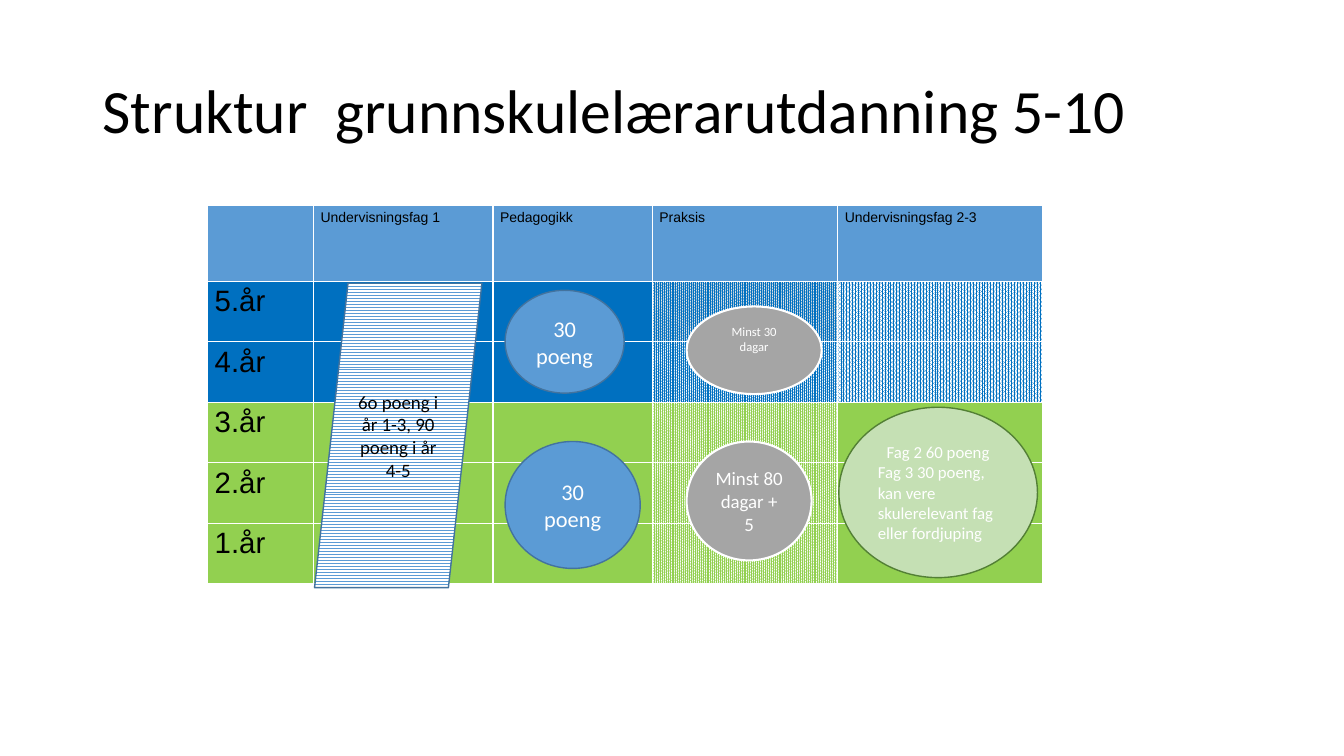
from lxml import etree
from pptx import Presentation
from pptx.dml.color import RGBColor
from pptx.enum.dml import MSO_PATTERN
from pptx.enum.shapes import MSO_SHAPE
from pptx.enum.text import MSO_ANCHOR, PP_ALIGN
from pptx.oxml.ns import qn
from pptx.util import Inches, Pt

LEFT, CENTER = PP_ALIGN.LEFT, PP_ALIGN.CENTER
TOP, MIDDLE = MSO_ANCHOR.TOP, MSO_ANCHOR.MIDDLE
OVAL, SLANTED = MSO_SHAPE.OVAL, MSO_SHAPE.FLOWCHART_DATA
PCT_80, PCT_90 = MSO_PATTERN.PERCENT_80, MSO_PATTERN.PERCENT_90
ZIG_ZAG = MSO_PATTERN.ZIG_ZAG

BLACK = RGBColor(0x00, 0x00, 0x00)
WHITE = RGBColor(0xFF, 0xFF, 0xFF)
LIGHT_GRAY = RGBColor(0xE7, 0xE6, 0xE6)
GRAY = RGBColor(0xA5, 0xA5, 0xA5)
SKY = RGBColor(0x5B, 0x9B, 0xD5)
SKY_EDGE = RGBColor(0x43, 0x73, 0x9E)
BLUE = RGBColor(0x00, 0x70, 0xC0)
GREEN = RGBColor(0x92, 0xD0, 0x50)
PALE_GREEN = RGBColor(0xC5, 0xE0, 0xB4)
DARK_GREEN = RGBColor(0x53, 0x80, 0x35)

TITLE = "Struktur  grunnskulelærarutdanning 5-10"
HEADERS = ["", "Undervisningsfag 1", "Pedagogikk", "Praksis", "Undervisningsfag 2-3"]
YEARS = ["5.år", "4.år", "3.år", "2.år", "1.år"]
COLUMN_WIDTHS = [1.05, 1.78, 1.58, 1.84, 2.03]
HEADER_HEIGHT, YEAR_HEIGHT = 0.75, 0.6

BLUE_90 = (PCT_90, BLUE, WHITE)
BLUE_80 = (PCT_80, BLUE, WHITE)
GREEN_90 = (PCT_90, GREEN, WHITE)
YEAR_FILLS = [
    [BLUE] * 3 + [(PCT_90, BLUE, LIGHT_GRAY), BLUE_80],
    [BLUE] * 3 + [BLUE_90, BLUE_80],
] + [[GREEN] * 3 + [GREEN_90, GREEN]] * 3

SHAPES = [
    (SLANTED, (3.12, 2.81, 1.66, 3.02), (ZIG_ZAG, SKY, WHITE), SKY_EDGE, 1,
     [("6o poeng i år 1-3, 90 poeng i år 4-5", CENTER)], 13.5, BLACK, 0.05),
    (OVAL, (6.81, 3.04, 1.34, 0.87), GRAY, WHITE, 1.5,
     [("Minst 30 dagar", CENTER)], 9, WHITE, 0.27),
    (OVAL, (6.81, 4.38, 1.24, 1.18), GRAY, WHITE, 1.5,
     [("Minst 80 dagar + 5", CENTER)], 13.5, WHITE, 0.05),
    (OVAL, (8.32, 4.04, 1.97, 1.69), PALE_GREEN, DARK_GREEN, 1,
     [("Fag 2 60 poeng", CENTER),
      ("Fag 3 30 poeng, kan vere skulerelevant fag eller fordjuping", LEFT)], 12, WHITE, 0.05),
    (OVAL, (5.01, 2.88, 1.18, 1.02), SKY, SKY_EDGE, 1,
     [("30 poeng", CENTER)], 16, WHITE, 0.05),
    (OVAL, (5.01, 4.38, 1.34, 1.26), SKY, SKY_EDGE, 1,
     [("30 poeng", CENTER)], 16, WHITE, 0.05),
]


def write(frame, lines, size, color=BLACK, font="Calibri", anchor=MIDDLE, spacing=1.0):
    frame.word_wrap = True
    frame.vertical_anchor = anchor
    for index, (text, align) in enumerate(lines):
        para = frame.add_paragraph() if index else frame.paragraphs[0]
        para.alignment = align
        para.line_spacing = spacing
        span = para.add_run()
        span.text = text
        span.font.size = Pt(size)
        span.font.name = font
        span.font.bold = False
        span.font.color.rgb = color


def paint(fill, look):
    if isinstance(look, RGBColor):
        fill.solid()
        fill.fore_color.rgb = look
    else:
        pattern, front, back = look
        fill.patterned()
        fill.pattern = pattern
        fill.fore_color.rgb = front
        fill.back_color.rgb = back


def add_borders(cell):
    properties = cell._tc.get_or_add_tcPr()
    for side in ("a:lnL", "a:lnR", "a:lnT", "a:lnB"):
        line = etree.SubElement(properties, qn(side), w=str(Pt(1)))
        solid = etree.SubElement(line, qn("a:solidFill"))
        etree.SubElement(solid, qn("a:srgbClr"), val=str(WHITE))


def add_plan(page):
    height = HEADER_HEIGHT + YEAR_HEIGHT * len(YEARS)
    table = page.shapes.add_table(
        len(YEARS) + 1, len(HEADERS), Inches(2.06), Inches(2.04),
        Inches(sum(COLUMN_WIDTHS)), Inches(height)).table
    for column, width in zip(table.columns, COLUMN_WIDTHS):
        column.width = Inches(width)
    texts = [HEADERS] + [[year] + [""] * (len(HEADERS) - 1) for year in YEARS]
    fills = [[SKY] * len(HEADERS)] + YEAR_FILLS
    for r, row in enumerate(table.rows):
        row.height = Inches(YEAR_HEIGHT if r else HEADER_HEIGHT)
        for c, cell in enumerate(row.cells):
            cell.margin_left = cell.margin_right = Inches(0.07)
            cell.margin_top = cell.margin_bottom = Inches(0.04)
            add_borders(cell)
            paint(cell.fill, fills[r][c])
            if texts[r][c]:
                write(cell.text_frame, [(texts[r][c], LEFT)], 21 if r else 10,
                      font="Arial", anchor=TOP)


def add_shapes(page):
    for kind, place, look, edge, weight, lines, size, color, bottom in SHAPES:
        shape = page.shapes.add_shape(kind, *map(Inches, place))
        shape.shadow.inherit = False
        paint(shape.fill, look)
        shape.line.color.rgb = edge
        shape.line.width = Pt(weight)
        shape.text_frame.margin_bottom = Inches(bottom)
        write(shape.text_frame, lines, size, color)


def main():
    deck = Presentation()
    deck.slide_width, deck.slide_height = Inches(13.33), Inches(7.5)
    page = deck.slides.add_slide(deck.slide_layouts[6])
    box = page.shapes.add_textbox(*map(Inches, (0.92, 0.4, 11.5, 1.45)))
    write(box.text_frame, [(TITLE, LEFT)], 44, spacing=0.9)
    add_plan(page)
    add_shapes(page)
    deck.save("out.pptx")


if __name__ == "__main__":
    main()
